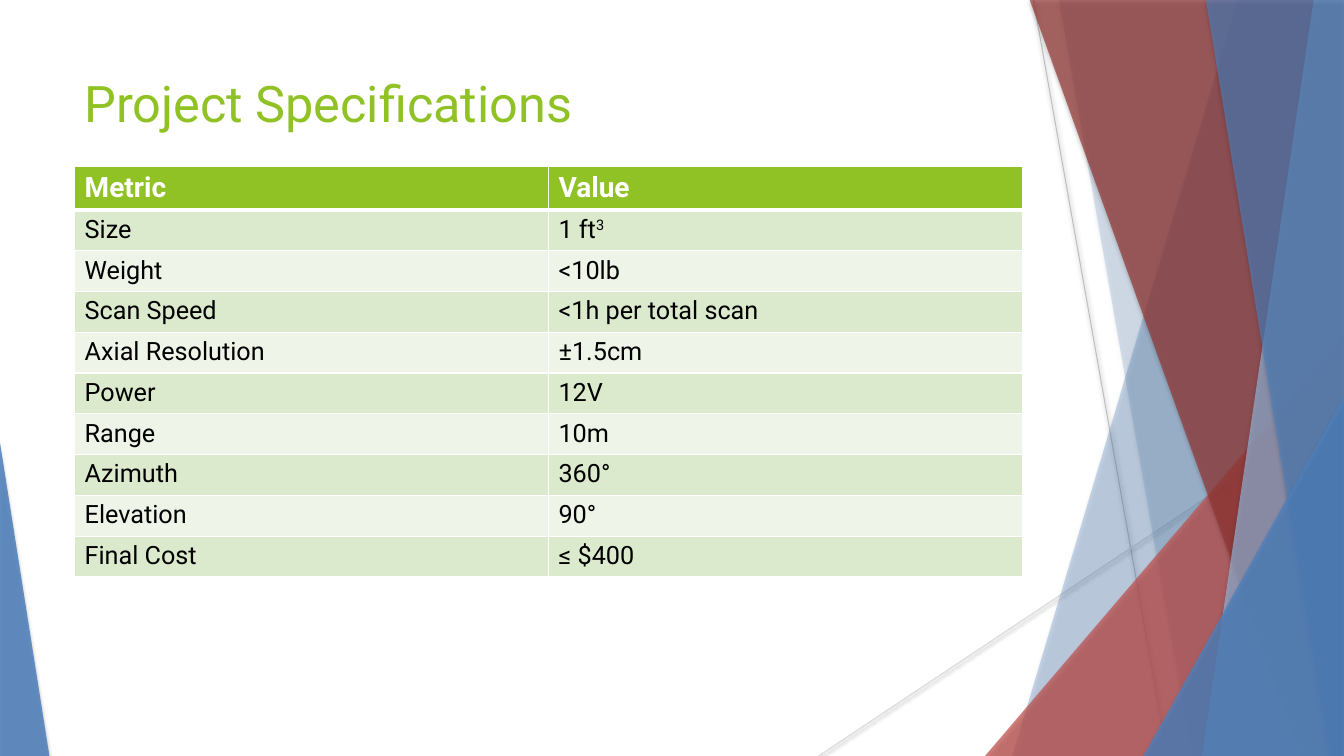
from pptx import Presentation
from pptx.dml.color import RGBColor
from pptx.enum.shapes import MSO_CONNECTOR, MSO_SHAPE
from pptx.enum.text import MSO_ANCHOR
from pptx.oxml import parse_xml
from pptx.oxml.ns import nsdecls, qn
from pptx.util import Inches, Pt
from lxml.etree import SubElement

GREEN, WHITE, BLACK, BLUE = "90C226", "FFFFFF", "000000", "4F81BD"
BANDS = ["DBE9CC", "EEF4E7"]
TOP, BOTTOM, RIGHT = -0.01, 7.5, 13.33

THREADS = [
    ((10.25, 0), (11.58, 7.5), "BFBFBF"),
    ((13.33, 4.03), (8.12, 7.5), "D9D9D9"),
]
BACK_BLADES = [(12.28, 10.04, BLUE, 30), (10.5, 11.82, BLUE, 20)]
FRONT_BLADES = [
    (10.21, 12.91, "953735", 70),
    (13.03, 11.92, "95B3D7", 70),
    (11.96, 13.18, BLUE, 65),
]
RED_CORNER = ((9.77, 3.33, 3.56, 4.17), 1, "C0504D", 72)
BLUE_CORNERS = [
    ((11.34, 3.93, 1.99, 3.57), 1, BLUE, 80),
    ((0, 4.39, 0.49, 3.11), 0, BLUE, 85),
]
SPECS = [
    ("Metric", "Value"),
    ("Size", "1 ft^3"),
    ("Weight", "<10lb"),
    ("Scan Speed", "<1h per total scan"),
    ("Axial Resolution", "±1.5cm"),
    ("Power", "12V"),
    ("Range", "10m"),
    ("Azimuth", "360°"),
    ("Elevation", "90°"),
    ("Final Cost", "≤ $400"),
]


def rgb(value):
    return RGBColor.from_string(value)


class SlideBuilder:
    font = "Roboto"
    border = 0.96

    def __init__(self, s):
        self.s = s

    def shadow(self, sp, alpha, blur, dist):
        sp._element.spPr.append(parse_xml(
            f'<a:effectLst {nsdecls("a")}><a:outerShdw blurRad="{Pt(blur)}" '
            f'dist="{Pt(dist)}" dir="5400000" rotWithShape="0"><a:srgbClr val="{BLACK}">'
            f'<a:alpha val="{alpha * 1000}"/></a:srgbClr></a:outerShdw></a:effectLst>'))

    def paint(self, sp, color, opacity):
        sp.fill.solid()
        sp.fill.fore_color.rgb = rgb(color)
        clr = sp._element.spPr.find(qn("a:solidFill"))[0]
        SubElement(clr, qn("a:alpha")).set("val", str(opacity * 1000))
        sp.line.fill.background()
        self.shadow(sp, 35, 3, 2)

    def line(self, start, end, color):
        points = [Inches(v) for v in start + end]
        cx = self.s.shapes.add_connector(MSO_CONNECTOR.STRAIGHT, *points)
        cx.line.color.rgb = rgb(color)
        cx.line.width = Pt(0.75)
        self.shadow(cx, 38, 3.1, 1.6)

    def blade(self, top_x, bottom_x, color, opacity):
        corners = [(RIGHT, TOP), (RIGHT, BOTTOM), (bottom_x, BOTTOM)]
        fb = self.s.shapes.build_freeform(Inches(top_x), Inches(TOP))
        fb.add_line_segments([(Inches(x), Inches(y)) for x, y in corners], close=True)
        self.paint(fb.convert_to_shape(), color, opacity)

    def triangle(self, box, apex, color, opacity):
        sp = self.s.shapes.add_shape(MSO_SHAPE.ISOSCELES_TRIANGLE, *map(Inches, box))
        sp.adjustments[0] = apex
        self.paint(sp, color, opacity)

    def add_runs(self, p, text, size, color, bold=False):
        base, _, power = text.partition("^")
        style = {"name": self.font, "size": Pt(size), "bold": bold}
        for part in filter(None, (base, power)):
            r = p.add_run()
            r.text = part
            for key, value in style.items():
                setattr(r.font, key, value)
            r.font.color.rgb = rgb(color)
        if power:
            r._r.get_or_add_rPr().set("baseline", "30000")

    def text(self, box, text, size, color):
        tf = self.s.shapes.add_textbox(*map(Inches, box)).text_frame
        tf.word_wrap = True
        tf.vertical_anchor = MSO_ANCHOR.TOP
        self.add_runs(tf.paragraphs[0], text, size, color)

    def cell_borders(self, cell, top, bottom):
        tcPr = cell._tc.get_or_add_tcPr()
        widths = {"L": self.border, "R": self.border, "T": top, "B": bottom}
        for side, width in widths.items():
            tcPr.append(parse_xml(
                f'<a:ln{side} {nsdecls("a")} w="{Pt(width)}"><a:solidFill>'
                f'<a:srgbClr val="{WHITE}"/></a:solidFill></a:ln{side}>'))

    def table(self, box, rows, header_height):
        height = box[3]
        table = self.s.shapes.add_table(len(rows), len(rows[0]), *map(Inches, box)).table
        row_height = (height - header_height) / (len(rows) - 1)
        for i, row in enumerate(rows):
            header = i == 0
            table.rows[i].height = Inches(header_height if header else row_height)
            for j, text in enumerate(row):
                cell = table.cell(i, j)
                self.cell_borders(cell, 3 if i == 1 else self.border,
                                  3 if header else self.border)
                cell.fill.solid()
                cell.fill.fore_color.rgb = rgb(GREEN if header else BANDS[(i - 1) % 2])
                self.add_runs(cell.text_frame.paragraphs[0], text,
                              20 if header else 18, WHITE if header else BLACK, header)


def main():
    prs = Presentation()
    prs.slide_width, prs.slide_height = Inches(13.33), Inches(7.5)
    page = SlideBuilder(prs.slides.add_slide(prs.slide_layouts[6]))
    for thread in THREADS:
        page.line(*thread)
    for blade in BACK_BLADES:
        page.blade(*blade)
    page.triangle(*RED_CORNER)
    for blade in FRONT_BLADES:
        page.blade(*blade)
    for corner in BLUE_CORNERS:
        page.triangle(*corner)
    page.text((0.74, 0.67, 9.4, 1.44), "Project Specifications", 36, GREEN)
    page.table((0.74, 1.65, 9.4, 4.06), SPECS, 0.42)
    prs.save("out.pptx")


if __name__ == "__main__":
    main()
